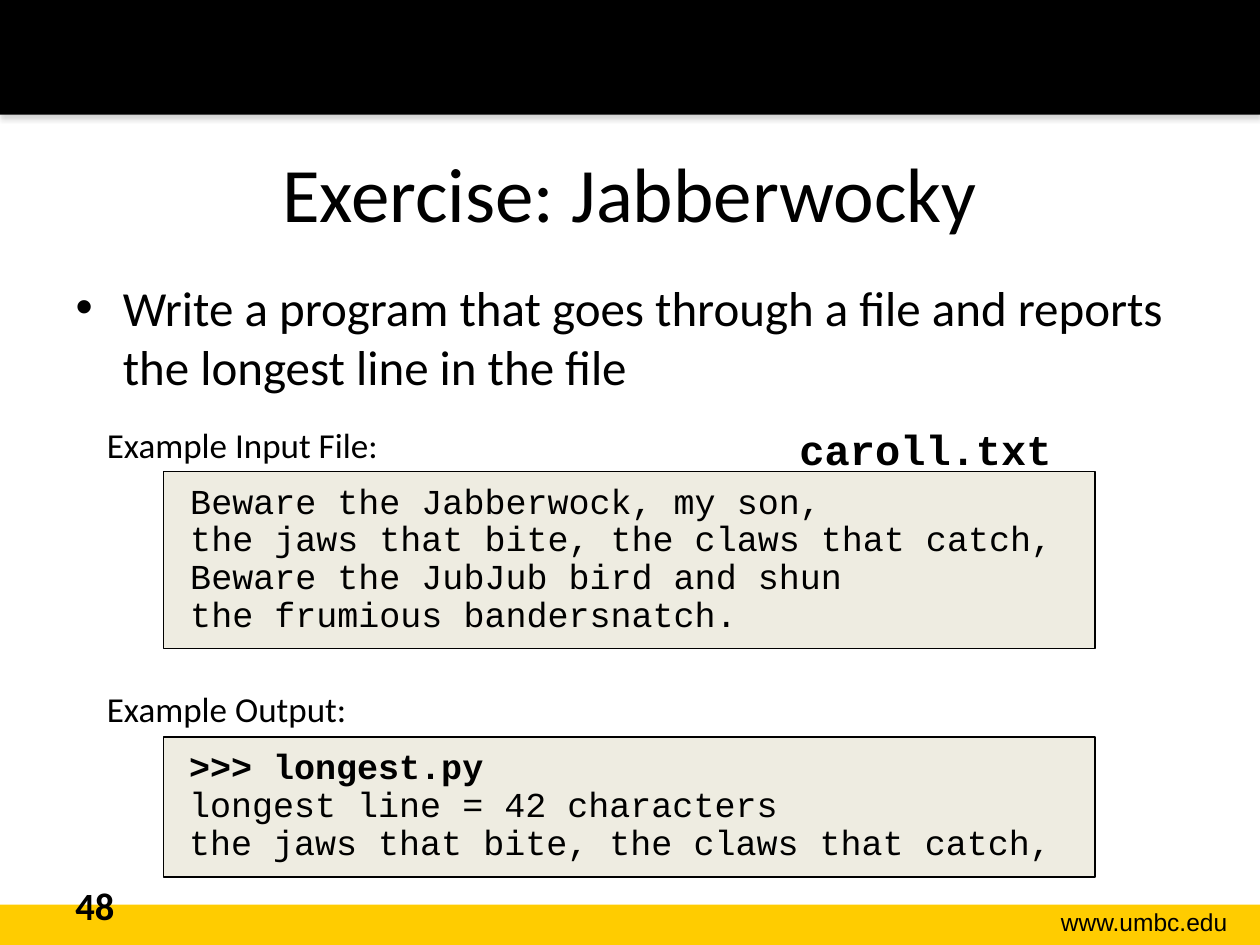
from dataclasses import dataclass
from lxml.etree import SubElement as Sub
from pptx import Presentation
from pptx.dml.color import RGBColor as RGB
from pptx.enum.shapes import MSO_SHAPE as Geo
from pptx.enum.text import MSO_ANCHOR as Anchor, MSO_AUTO_SIZE as Fit, PP_ALIGN as Align
from pptx.oxml.ns import qn
from pptx.util import Inches, Pt


@dataclass(frozen=True)
class Theme:
    black: RGB = RGB(0, 0, 0)
    gold: RGB = RGB(0xFF, 0xCC, 0x00)
    cream: RGB = RGB(0xEE, 0xEC, 0xE1)
    sans: str = "Calibri"
    web: str = "Arial"
    mono: str = "Courier New"
    title: int = 44
    body: int = 28
    file: int = 24
    page: int = 22
    text: int = 20
    foot: int = 14


@dataclass(frozen=True)
class Box:
    left: float
    top: float
    width: float
    height: float

    def place(self) -> tuple:
        return tuple(Inches(n) for n in (self.left, self.top, self.width, self.height))


@dataclass(frozen=True)
class Label:
    text: str
    box: Box
    size: int
    face: str
    bold: bool = False
    align: Align = Align.LEFT
    wrap: bool = True


@dataclass(frozen=True)
class Code:
    box: Box
    lines: tuple[str, ...]
    indent: float = 0


THEME = Theme()
LABELS = (
    Label("www.umbc.edu", Box(7.85, 7.15, 1.99, 0.34), THEME.foot, THEME.web, align=Align.RIGHT),
    Label("48", Box(0.5, 6.95, 2.33, 0.4), THEME.page, THEME.sans, bold=True),
    Label("Example Input File:", Box(0.75, 3.31, 2.61, 0.44), THEME.text, THEME.sans, wrap=False),
    Label("Example Output:", Box(0.75, 5.41, 2.29, 0.44), THEME.text, THEME.sans, wrap=False),
    Label("caroll.txt", Box(6.17, 3.31, 2.35, 0.5), THEME.file, THEME.mono, True, Align.CENTER),
)
CODES = (
    Code(Box(1.3, 5.85, 7.39, 1.11), (
        ">>> longest.py",
        "longest line = 42 characters",
        "the jaws that bite, the claws that catch,",
    )),
    Code(Box(1.3, 3.74, 7.39, 1.41), (
        "Beware the Jabberwock, my son,",
        "the jaws that bite, the claws that catch,",
        "Beware the JubJub bird and shun",
        "the frumious bandersnatch.",
    ), 0.01),
)


def style(para, size: int, face: str, bold: bool = False) -> None:
    """Set the font of a whole paragraph."""
    font = para.font
    font.size, font.name, font.bold = Pt(size), face, bold
    font.color.rgb = THEME.black


def block(slide, box: Box, fill: RGB):
    """Draw a plain filled rectangle without line or shadow."""
    shape = slide.shapes.add_shape(Geo.RECTANGLE, *box.place())
    shape.shadow.inherit = False
    shape.fill.solid()
    shape.fill.fore_color.rgb = fill
    shape.line.fill.background()
    return shape


def shade(shape) -> None:
    """Give a shape a soft grey shadow below it."""
    effect = shape.element.spPr.find(qn("a:effectLst"))
    outer = Sub(effect, qn("a:outerShdw"), blurRad=str(Pt(3.1)), dist=str(Pt(1.8)),
                dir="5400000", algn="t", rotWithShape="0")
    color = Sub(outer, qn("a:srgbClr"), val="808080")
    Sub(color, qn("a:alpha"), val="35000")


def write(slide, label: Label) -> None:
    """Draw one text label."""
    frame = slide.shapes.add_textbox(*label.box.place()).text_frame
    frame.word_wrap = label.wrap
    frame.text = label.text
    para = frame.paragraphs[0]
    para.alignment = label.align
    style(para, label.size, label.face, label.bold)


def list_code(slide, code: Code) -> None:
    """Draw a framed panel of code lines, with prompts in bold."""
    shape = block(slide, code.box, THEME.cream)
    shape.line.color.rgb = THEME.black
    shape.line.width = Pt(0.75)
    frame = shape.text_frame
    frame.word_wrap = True
    frame.auto_size = Fit.SHAPE_TO_FIT_TEXT
    frame.vertical_anchor = Anchor.TOP
    frame.margin_left = frame.margin_right = Inches(0.2)
    frame.margin_top = frame.margin_bottom = Inches(0.1)
    frame.text = "\n".join(code.lines)
    for para, line in zip(frame.paragraphs, code.lines):
        para.alignment = Align.LEFT
        para.line_spacing = 0.9
        if code.indent:
            para.level = 1
            props = para._p.get_or_add_pPr()
            props.set("marL", str(Inches(code.indent)))
            props.set("indent", "0")
        style(para, THEME.text, THEME.mono, line.startswith(">>>"))


def fill_in(holder, box: Box, text: str, size: int):
    """Move a placeholder and set its text."""
    holder.left, holder.top, holder.width, holder.height = box.place()
    holder.text_frame.text = text
    para = holder.text_frame.paragraphs[0]
    style(para, size, THEME.sans)
    return para


def main() -> None:
    """Build the slide and save it."""
    deck = Presentation()
    deck.slide_width, deck.slide_height = Inches(10), Inches(7.5)
    slide = deck.slides.add_slide(deck.slide_layouts[1])
    block(slide, Box(0, 7.18, 10, 0.32), THEME.gold)
    shade(block(slide, Box(0, 0, 10, 0.91), THEME.black))
    fill_in(slide.shapes.title, Box(0.5, 0.9, 9, 1.25), "Exercise: Jabberwocky", THEME.title)
    task = "Write a program that goes through a file and reports the longest line in the file"
    para = fill_in(slide.placeholders[1], Box(0.5, 2.15, 9, 4.55), task, THEME.body)
    para.space_before = Pt(0)
    for code in CODES:
        list_code(slide, code)
    for label in LABELS:
        write(slide, label)
    deck.save("out.pptx")


if __name__ == "__main__":
    main()
